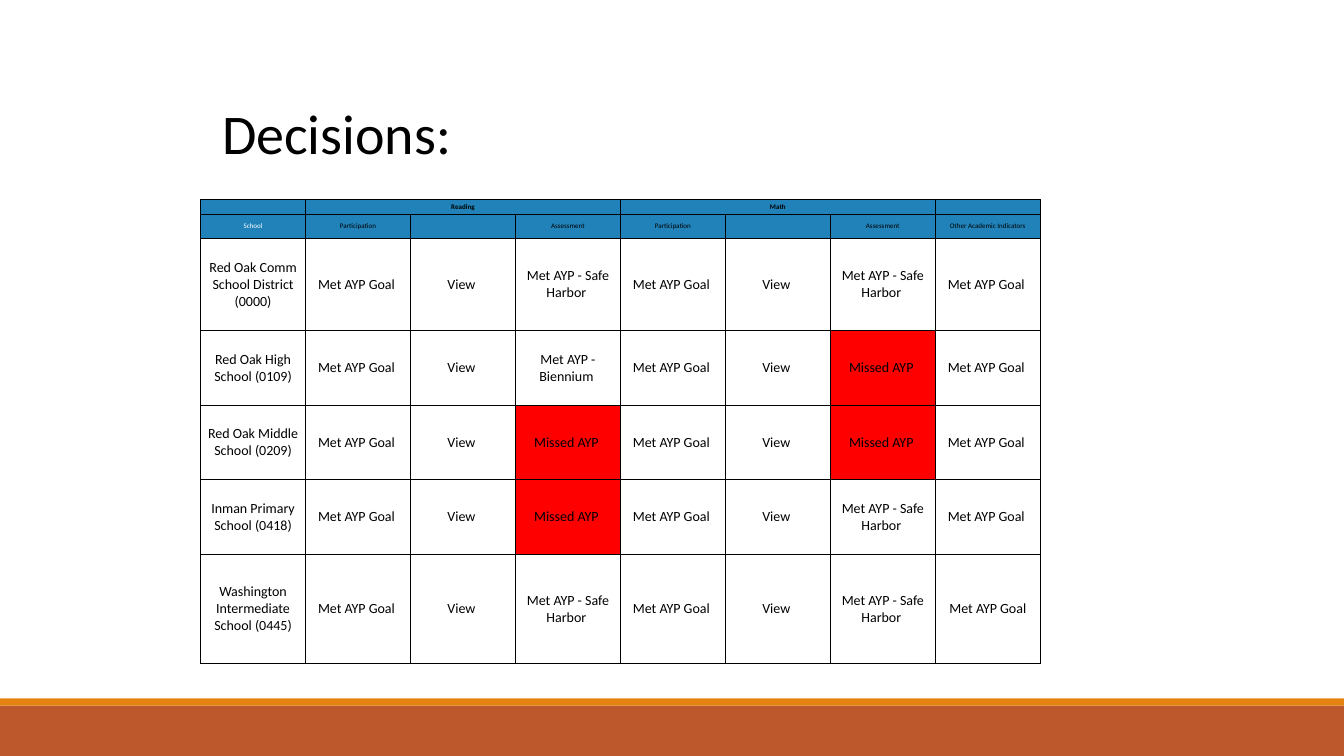
from typing import NamedTuple

from lxml.etree import SubElement
from pptx import Presentation
from pptx.dml.color import RGBColor
from pptx.enum.shapes import MSO_SHAPE
from pptx.enum.text import MSO_ANCHOR, PP_ALIGN
from pptx.oxml.ns import qn
from pptx.shapes.shapetree import SlideShapes
from pptx.table import _Cell
from pptx.util import Pt

EMU_PER_PX = 9525
FONT = "Calibri"
BLACK = RGBColor(0x00, 0x00, 0x00)
WHITE = RGBColor(0xFF, 0xFF, 0xFF)
HEADER_BLUE = RGBColor(0x21, 0x82, 0xB9)
MISSED_RED = RGBColor(0xFF, 0x00, 0x00)
RUST = RGBColor(0xBD, 0x58, 0x2C)
ORANGE = RGBColor(0xE4, 0x83, 0x12)

COLUMN_WIDTH = 100
ROW_HEIGHTS = [14, 23, 88, 71, 71, 71, 104]
GOAL = "Met AYP Goal "
HARBOR = "Met AYP - Safe Harbor "
BIENNIUM = "Met AYP - Biennium "
MISSED = "Missed AYP "
VIEW = "View "


class Band(NamedTuple):
    top: int
    height: int
    color: RGBColor


class School(NamedTuple):
    name: str
    reading: str
    math: str
    other: str = GOAL

    def row(self) -> list[str]:
        return [self.name, GOAL, VIEW, self.reading, GOAL, VIEW, self.math, self.other]


class CellStyle(NamedTuple):
    fill: RGBColor
    size: int
    color: RGBColor = BLACK
    bold: bool = False


BANDS = [Band(672, 48, RUST), Band(665, 7, ORANGE)]
SUBJECTS = ["", "Reading", "", "", "Math", "", "", ""]
MEASURES = ["Participation", "", "Assessment"]
HEADINGS = ["School", *MEASURES, *MEASURES, "Other Academic Indicators"]
SCHOOLS = [
    School("Red Oak Comm School District (0000)", HARBOR, HARBOR),
    School("Red Oak High School (0109)", BIENNIUM, MISSED),
    School("Red Oak Middle School (0209)", MISSED, MISSED),
    School("Inman Primary School (0418)", MISSED, HARBOR),
    School("Washington Intermediate School (0445)", HARBOR, HARBOR, GOAL.strip()),
]


def px(length: int) -> int:
    return length * EMU_PER_PX


def add_band(shapes: SlideShapes, band: Band) -> None:
    bar = shapes.add_shape(
        MSO_SHAPE.RECTANGLE, 0, px(band.top), px(1280), px(band.height)
    )
    bar.shadow.inherit = False
    bar.fill.solid()
    bar.fill.fore_color.rgb = band.color
    bar.line.fill.background()


def add_borders(cell: _Cell) -> None:
    properties = cell._tc.get_or_add_tcPr()
    for side in ("a:lnL", "a:lnR", "a:lnT", "a:lnB"):
        border = SubElement(properties, qn(side), w=str(Pt(0.75)))
        fill = SubElement(border, qn("a:solidFill"))
        SubElement(fill, qn("a:srgbClr"), val=str(BLACK))


def style_for(row: int, text: str) -> CellStyle:
    if row == 0:
        return CellStyle(HEADER_BLUE, 5, bold=True)
    if row == 1:
        return CellStyle(HEADER_BLUE, 5, WHITE if text == "School" else BLACK)
    return CellStyle(MISSED_RED if text == MISSED else WHITE, 10)


def fill_cell(cell: _Cell, text: str, style: CellStyle) -> None:
    add_borders(cell)
    cell.fill.solid()
    cell.fill.fore_color.rgb = style.fill
    cell.margin_left = cell.margin_right = px(5)
    cell.margin_top = cell.margin_bottom = px(3)
    cell.vertical_anchor = MSO_ANCHOR.MIDDLE
    paragraph = cell.text_frame.paragraphs[0]
    paragraph.text = text
    paragraph.alignment = PP_ALIGN.CENTER
    for run in paragraph.runs:
        run.font.name = FONT
        run.font.size = Pt(style.size)
        run.font.bold = style.bold
        run.font.color.rgb = style.color
    SubElement(paragraph._p, qn("a:endParaRPr"), sz=str(style.size * 100))


def add_decisions(shapes: SlideShapes) -> None:
    rows = [SUBJECTS, HEADINGS, *(school.row() for school in SCHOOLS)]
    decisions = shapes.add_table(
        len(rows), len(HEADINGS), px(191), px(190),
        px(COLUMN_WIDTH * len(HEADINGS)), px(sum(ROW_HEIGHTS)),
    ).table
    decisions.first_row = decisions.horz_banding = False
    for column in decisions.columns:
        column.width = px(COLUMN_WIDTH)
    for row_index, (height, texts) in enumerate(zip(ROW_HEIGHTS, rows)):
        decisions.rows[row_index].height = px(height)
        for column_index, text in enumerate(texts):
            fill_cell(
                decisions.cell(row_index, column_index), text, style_for(row_index, text)
            )
    for start in (1, 4):
        decisions.cell(0, start).merge(decisions.cell(0, start + 2))


def add_title(shapes: SlideShapes) -> None:
    title = shapes.add_textbox(px(202), px(89), px(647), px(74)).text_frame
    title.word_wrap = True
    title.text = "Decisions:"
    font = title.paragraphs[0].runs[0].font
    font.name = FONT
    font.size = Pt(40)
    font.color.rgb = BLACK


def main() -> None:
    presentation = Presentation()
    presentation.slide_width = px(1280)
    presentation.slide_height = px(720)
    slide = presentation.slides.add_slide(presentation.slide_layouts[6])
    for band in BANDS:
        add_band(slide.shapes, band)
    add_decisions(slide.shapes)
    add_title(slide.shapes)
    presentation.save("out.pptx")


if __name__ == "__main__":
    main()
